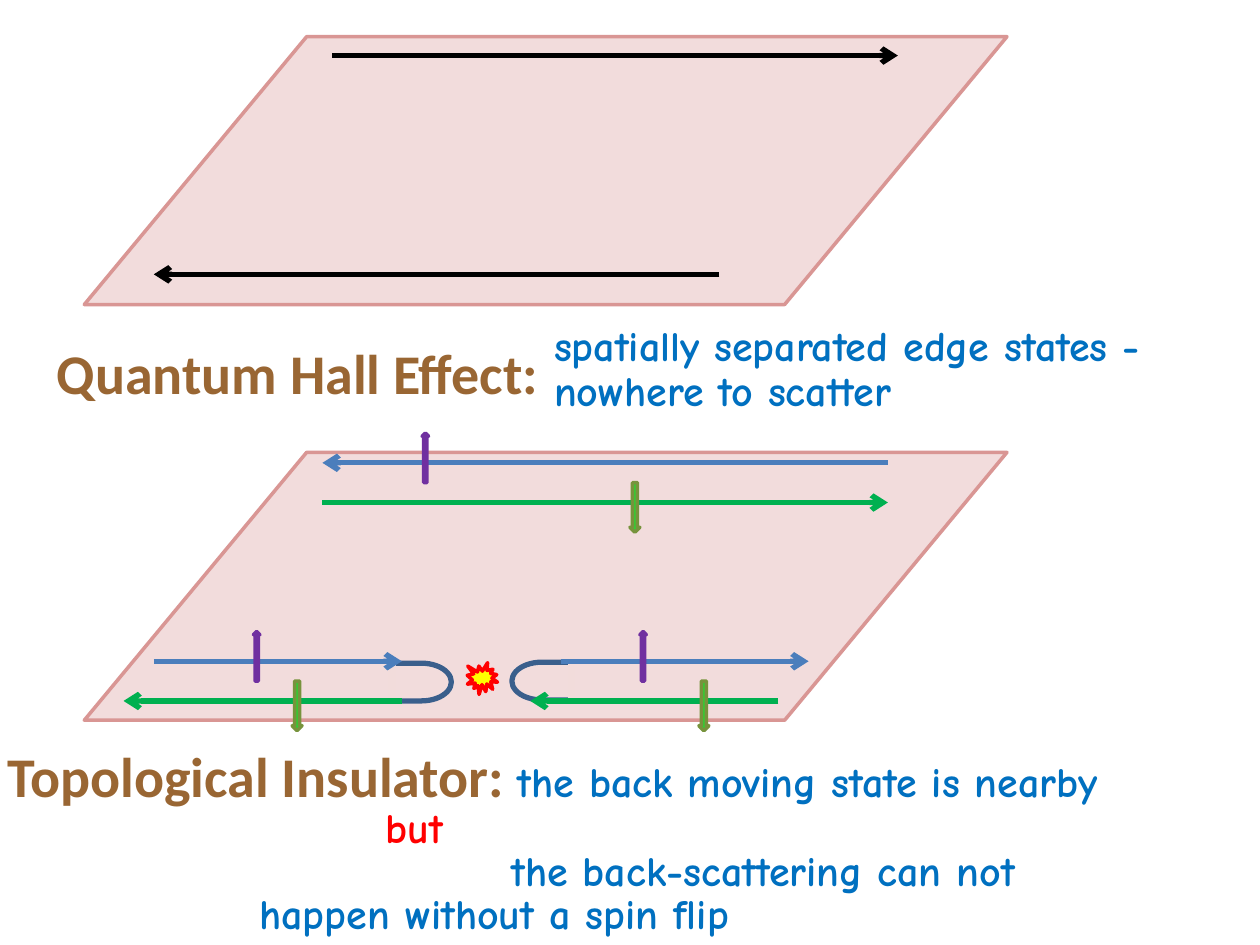
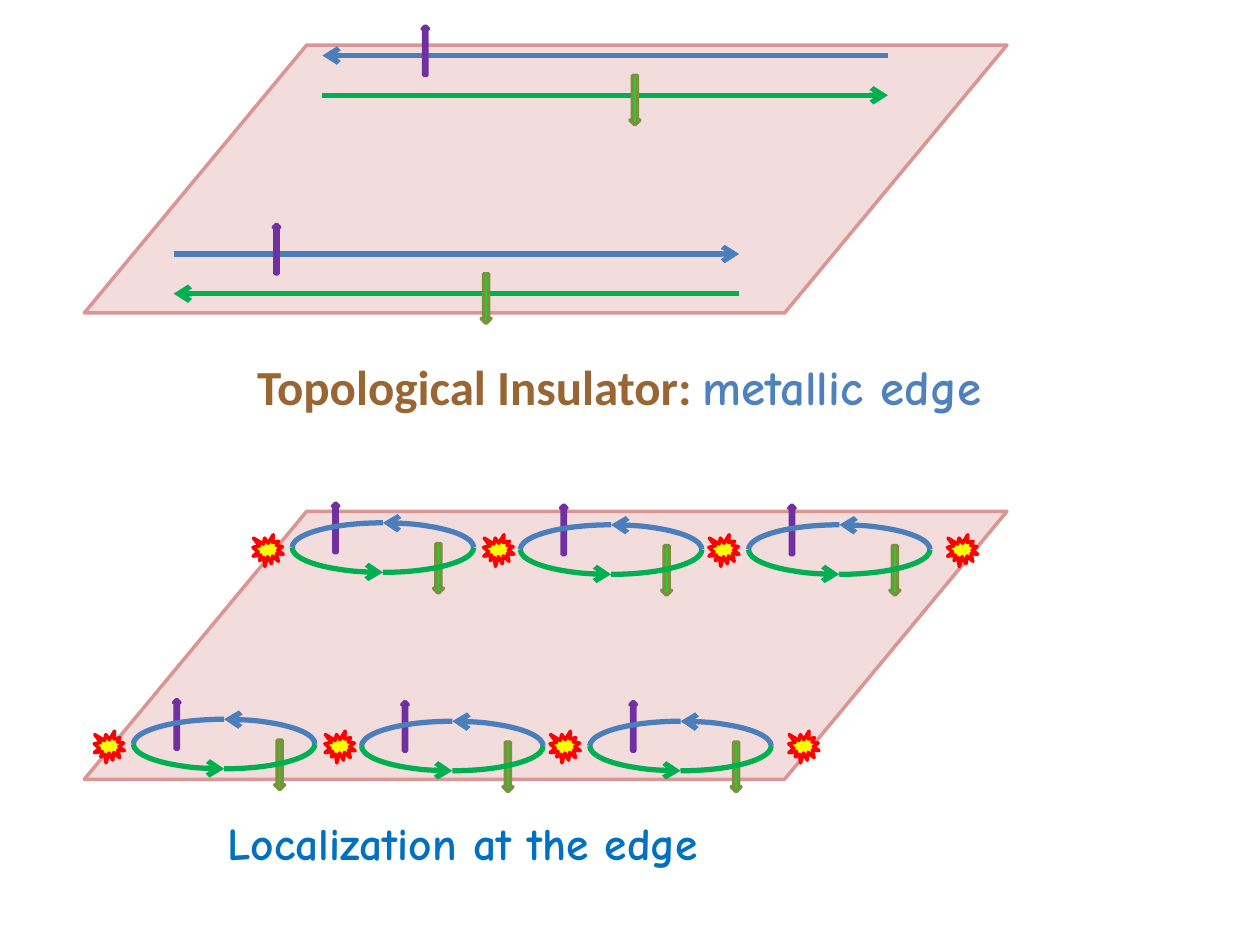
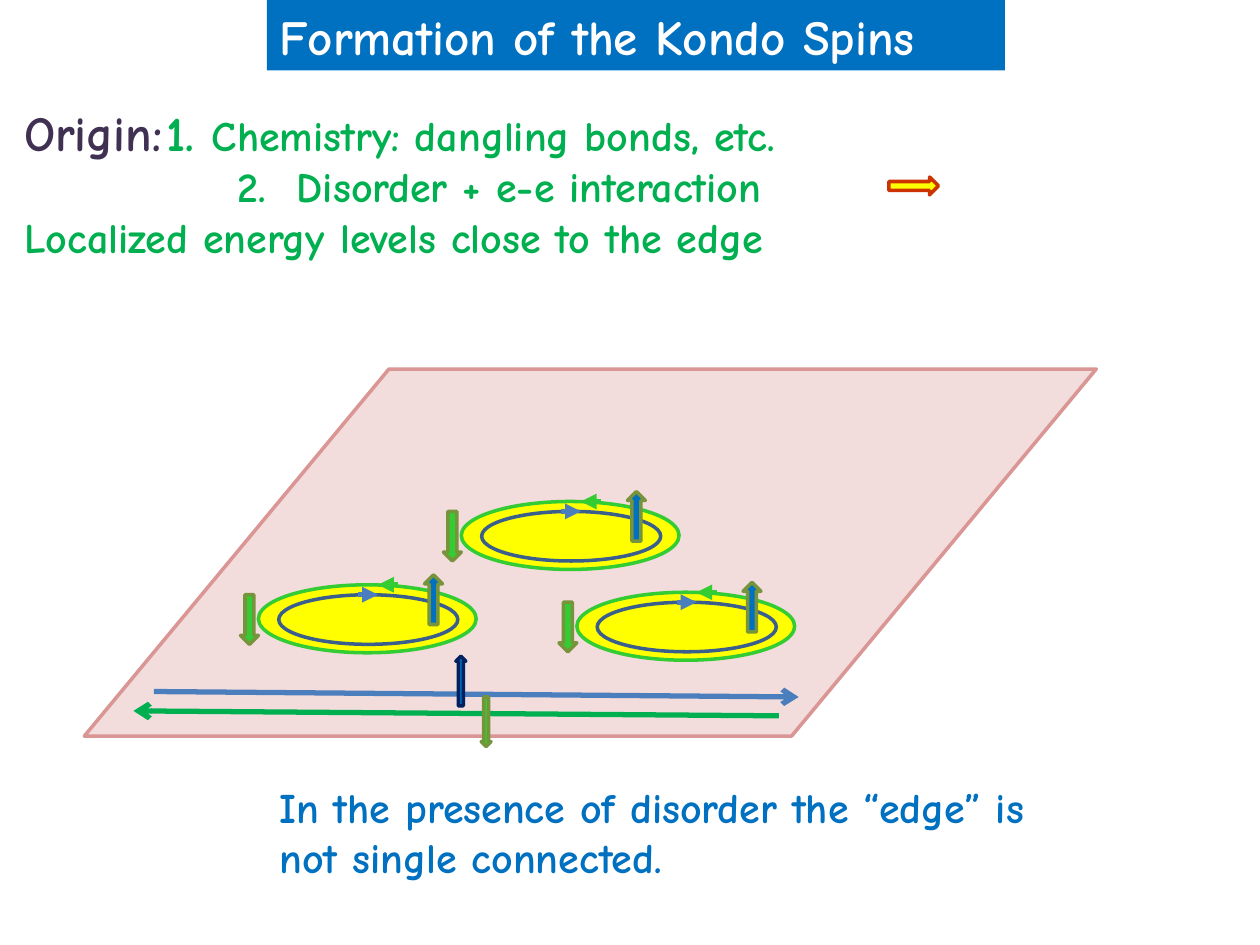
from lxml import etree
from pptx import Presentation
from pptx.dml.color import RGBColor
from pptx.enum.shapes import MSO_CONNECTOR, MSO_SHAPE
from pptx.enum.text import MSO_ANCHOR, MSO_AUTO_SIZE, PP_ALIGN
from pptx.oxml.ns import qn
from pptx.util import Cm, Pt

SHEET = MSO_SHAPE.PARALLELOGRAM
UP = MSO_SHAPE.UP_ARROW
DOWN = MSO_SHAPE.DOWN_ARROW
RIGHT = MSO_SHAPE.RIGHT_ARROW
ARC = MSO_SHAPE.ARC
OVAL = MSO_SHAPE.OVAL
SEAL = MSO_SHAPE.EXPLOSION1
DELAY = MSO_SHAPE.FLOWCHART_DELAY
STRAIGHT = MSO_CONNECTOR.STRAIGHT
TOP = MSO_ANCHOR.TOP
LEFT = PP_ALIGN.LEFT
FIXED = MSO_AUTO_SIZE.NONE

BLACK = RGBColor(0x00, 0x00, 0x00)
WHITE = RGBColor(0xFF, 0xFF, 0xFF)
PINK = RGBColor(0xE6, 0xB9, 0xB8)
ROSE = RGBColor(0xD9, 0x96, 0x94)
BLUSH = RGBColor(0xF2, 0xDC, 0xDB)
STEEL = RGBColor(0x4B, 0x7E, 0xBC)
BLUE = RGBColor(0x4F, 0x81, 0xBD)
SLATE = RGBColor(0x3A, 0x5F, 0x8C)
AZURE = RGBColor(0x00, 0x70, 0xC0)
NAVY = RGBColor(0x00, 0x20, 0x60)
PURPLE = RGBColor(0x70, 0x30, 0xA0)
PLUM = RGBColor(0x40, 0x31, 0x52)
GREEN = RGBColor(0x00, 0xB0, 0x50)
LIME = RGBColor(0x33, 0xCC, 0x33)
OLIVE = RGBColor(0x77, 0x93, 0x3C)
YELLOW = RGBColor(0xFF, 0xFF, 0x00)
RED = RGBColor(0xFF, 0x00, 0x00)
RUST = RGBColor(0xCC, 0x33, 0x00)
BROWN = RGBColor(0x99, 0x66, 0x33)

COMIC = "Comic Neue"
PLAIN = "Calibri"


def tip(item, end, kind):
    ln = item.line._get_or_add_ln()
    etree.SubElement(ln, qn(f"a:{end}End")).set("type", kind)


def draw(slide, kind, x, y, w, h, fill=None, line=BLACK, width=2, flip=""):
    shape = slide.shapes.add_shape(kind, Cm(x), Cm(y), Cm(w), Cm(h))
    shape.shadow.inherit = False
    if fill is None:
        shape.fill.background()
    else:
        shape.fill.solid()
        shape.fill.fore_color.rgb = fill
    shape.line.color.rgb = line
    shape.line.width = Pt(width)
    for axis in flip:
        shape._element.spPr.get_or_add_xfrm().set("flip" + axis, "1")
    return shape


def link(slide, x1, y1, x2, y2, color, width=3, end="arrow"):
    line = slide.shapes.add_connector(STRAIGHT, Cm(x1), Cm(y1), Cm(x2), Cm(y2))
    line.line.color.rgb = color
    line.line.width = Pt(width)
    if end:
        tip(line, "tail", end)
    etree.SubElement(line._element.spPr, qn("a:effectLst"))


def fit(shape, x, y, w, h, wrap=True):
    shape.left, shape.top, shape.width, shape.height = Cm(x), Cm(y), Cm(w), Cm(h)
    frame = shape.text_frame
    frame.auto_size = FIXED
    frame.word_wrap = wrap
    frame.vertical_anchor = TOP
    return shape


def box(slide, x, y, w, h):
    return fit(slide.shapes.add_textbox(0, 0, 0, 0), x, y, w, h)


def write(shape, text, size=24, color=AZURE, face=COMIC, new=True,
          left=0, first=0, space=1.0):
    frame = shape.text_frame
    para = frame.paragraphs[-1]
    if new:
        if para.runs:
            para = frame.add_paragraph()
        para.alignment = LEFT
        para.line_spacing = space
        para.space_before = Pt(0)
        props = para._p.get_or_add_pPr()
        props.set("marL", str(Cm(left)))
        props.set("indent", str(Cm(first)))
        etree.SubElement(props, qn("a:buNone"))
    run = para.add_run()
    run.text = text
    run.font.name = face
    run.font.size = Pt(size)
    run.font.bold = True
    run.font.color.rgb = color


def sheet(slide, y, w=18.6, h=5.4):
    shape = draw(slide, SHEET, 1.7, y, w, h, PINK, ROSE)
    shape.adjustments[0] = 0.83
    tint = shape._element.spPr.find(qn("a:solidFill"))[0]
    etree.SubElement(tint, qn("a:alpha")).set("val", "49000")


def spins(slide, x, y, up, down, rise, drop):
    draw(slide, UP, x + up, y + rise, 0.13, 1, BLUE, PURPLE)
    draw(slide, DOWN, x + down, y + drop, 0.2, 1, LIME, OLIVE)


def lane(slide, x, y, blue, green, up=2.01, down=6.2):
    link(slide, x + blue[0], y, x + blue[1], y, STEEL)
    link(slide, x + green[0], y + 0.8, x + green[1], y + 0.8, GREEN)
    spins(slide, x, y, up, down, -0.6, 0.4)


def turn(slide, x, y, flip=""):
    draw(slide, DELAY, x, y, 1.2, 0.76, None, SLATE, 3, flip)
    side = x + 1.2 if flip else x
    link(slide, side, y - 0.2, side, y + 0.8, BLUSH, 4.5, None)


def seal(slide, x, y):
    draw(slide, SEAL, x, y, 0.61, 0.64, YELLOW, RED)


def loop(slide, x, y):
    spins(slide, x, y, 0.81, 2.85, -0.4, 0.42)
    for flip, color in (("", STEEL), ("H", STEEL), ("V", GREEN), ("HV", GREEN)):
        arc = draw(slide, ARC, x, y, 3.66, 1, None, color, 3, flip)
        if flip in ("", "HV"):
            tip(arc, "head", "arrow")


def chain(slide, x, y):
    for step in (0, 4.65, 9.19, 14):
        seal(slide, x + step, y + 0.24)
    for i in range(3):
        loop(slide, x + 0.79 + 4.6 * i, y + (0.04 if i else 0))


def puddle(slide, x, y):
    draw(slide, OVAL, x, y, 4.39, 1.37, YELLOW, LIME)
    draw(slide, OVAL, x + 0.41, y + 0.2, 3.61, 1, YELLOW, SLATE)
    link(slide, x + 2.01, y + 0.2, x + 2.41, y + 0.2, STEEL, end="triangle")
    link(slide, x + 2.82, y, x + 2.41, y, LIME, end="triangle")
    draw(slide, DOWN, x - 0.36, y + 0.2, 0.36, 1, LIME, OLIVE)
    draw(slide, UP, x + 3.35, y - 0.2, 0.36, 1, AZURE, OLIVE)


def scatter(slide):
    sheet(slide, 0.74)
    link(slide, 6.7, 1.12, 18.1, 1.12, BLACK)
    link(slide, 14.5, 5.53, 3.1, 5.53, BLACK)
    sheet(slide, 9.12)
    lane(slide, 6.5, 9.33, (11.4, 0), (0, 11.4))
    turn(slide, 7.9, 13.37)
    lane(slide, 2.49, 13.33, (0.61, 5.61), (5.61, 0), 2.62, 3.4)
    turn(slide, 10.32, 13.35, "H")
    lane(slide, 10.69, 13.33, (0.61, 5.61), (5, 0), 2.21, 3.4)
    seal(slide, 9.42, 13.36)

    title = fit(slide.shapes.title, 0.89, 6.7, 10.62, 1.62, wrap=False)
    write(title, "Quantum Hall Effect:", size=32, color=BROWN, face=PLAIN)
    note = box(slide, 10.92, 6.43, 13.18, 2.1)
    write(note, "spatially separated edge states - nowhere to scatter", space=0.9)
    note = box(slide, -0.1, 15.04, 25, 4)
    write(note, "Topological Insulator: ", size=32, color=BROWN, face=PLAIN, space=0.85)
    write(note, "the back moving state is nearby", new=False)
    write(note, "but", color=RED, left=7.62, space=0.85)
    write(note, "the back-scattering can not", left=10.16, space=0.85)
    write(note, "happen without a spin flip", left=5.08, space=0.85)


def local(slide):
    sheet(slide, 0.91)
    lane(slide, 6.5, 1.12, (11.4, 0), (0, 11.4))
    lane(slide, 3.5, 5.12, (0, 11.4), (11.4, 0))
    title = fit(slide.shapes.title, 4.93, 7.06, 15.95, 1.45)
    write(title, "Topological Insulator: ", size=28, color=BROWN, face=PLAIN)
    write(title, "metallic edge", size=28, color=BLUE, new=False)
    sheet(slide, 10.31)
    chain(slide, 5.1, 10.54)
    chain(slide, 1.9, 14.5)
    write(box(slide, 4.34, 16.31, 11.4, 1.37), "Localization at the edge", size=26)


def kondo(slide):
    title = fit(slide.shapes.title, 5.38, 0, 14.88, 1.42)
    title.fill.solid()
    title.fill.fore_color.rgb = AZURE
    write(title, "Formation of the Kondo Spins", size=28, color=WHITE)

    body = fit(slide.placeholders[1], 0.23, 1.93, 24.66, 3.5)
    write(body, "Origin:\t", size=28, color=PLUM, left=2.87, first=-2.87)
    write(body, "1. ", size=28, color=GREEN, new=False)
    write(body, "Chemistry: dangling bonds, etc.", color=GREEN, new=False)
    write(body, "2.\tDisorder + e-e interaction", color=GREEN, left=5.5, first=-1.2)
    write(body, "Localized energy levels close to the edge", color=GREEN)
    draw(slide, RIGHT, 17.92, 3.57, 1, 0.36, YELLOW, RUST)

    sheet(slide, 7.44, 20.4, 7.4)
    link(slide, 3.1, 13.94, 16.1, 14.05, STEEL)
    link(slide, 15.7, 14.43, 2.69, 14.33, GREEN)
    draw(slide, DOWN, 9.7, 14.05, 0.2, 1, LIME, OLIVE)
    draw(slide, UP, 9.19, 13.23, 0.2, 1, AZURE, NAVY)
    for x, y in ((5.21, 11.79), (11.63, 11.94), (9.3, 10.11)):
        puddle(slide, x, y)
    note = box(slide, 5.38, 15.62, 15.54, 2.31)
    write(note, "In the presence of disorder the “edge” is not single connected.")


def main():
    deck = Presentation()
    deck.slide_width, deck.slide_height = Cm(25.4), Cm(19.05)
    for build, layout in ((scatter, 5), (local, 5), (kondo, 1)):
        build(deck.slides.add_slide(deck.slide_layouts[layout]))
    deck.save("out.pptx")


if __name__ == "__main__":
    main()
